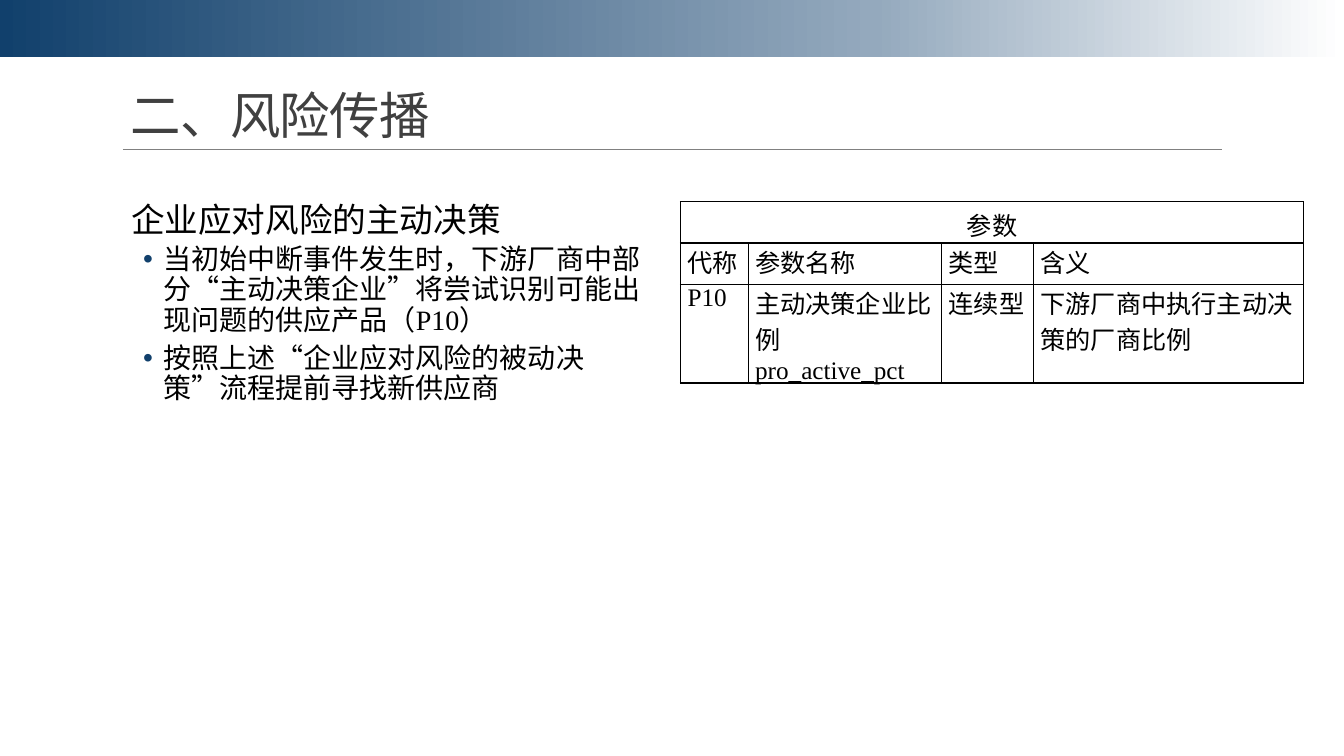
"""Build the risk propagation slide with a decision list and a parameter table."""
from copy import deepcopy

from lxml.etree import SubElement
from pptx import Presentation
from pptx.dml.color import RGBColor
from pptx.enum.shapes import MSO_CONNECTOR, MSO_SHAPE
from pptx.enum.text import MSO_ANCHOR, PP_ALIGN
from pptx.oxml import parse_xml
from pptx.oxml.ns import nsdecls, qn
from pptx.util import Pt

PX = 9144
FONT = "Times New Roman"
NAVY, BLACK, GREY, DARK = "11406C", "000000", "808080", "404040"

TITLE = "二、风险传播"
HEADING = "企业应对风险的主动决策"
POINTS = [
    "当初始中断事件发生时，下游厂商中部分“主动决策企业”将尝试识别可能出现问题的供应产品（P10）",
    "按照上述“企业应对风险的被动决策”流程提前寻找新供应商",
]
PARAMETERS = [
    ["参数", "", "", ""],
    ["代称", "参数名称", "类型", "含义"],
    ["P10", "主动决策企业比例\npro_active_pct", "连续型", "下游厂商中执行主动决策的厂商比例"],
]
COLUMNS = [67, 192, 91, 268]
ROWS = [41, 41, 98]
BAND_STOPS = [(0, NAVY), (0.65, "94A9BD"), (1, "FFFFFF")]


def px(*lengths):
    return [length * PX for length in lengths]


def color(value):
    return RGBColor.from_string(value)


def style(paragraph, size, ink=BLACK):
    for run in paragraph.runs:
        run.font.name = FONT
        run.font.size = Pt(size)
        run.font.color.rgb = color(ink)


def space(paragraph, line, before, after):
    paragraph.line_spacing = line
    paragraph.space_before = Pt(before)
    paragraph.space_after = Pt(after)


def margins(frame, left, top, right, bottom):
    frame.margin_left, frame.margin_top, frame.margin_right, frame.margin_bottom = px(
        left, top, right, bottom)


def indent(paragraph, left, first=0, bullet=None):
    props = paragraph._p.get_or_add_pPr()
    props.set("marL", str(left * PX))
    props.set("indent", str(first * PX))
    if bullet:
        SubElement(SubElement(props, qn("a:buClr")), qn("a:srgbClr")).set("val", NAVY)
        SubElement(props, qn("a:buFont")).set("typeface", "Arial")
        SubElement(props, qn("a:buChar")).set("char", bullet)


def add_text(slide, box, text):
    frame = slide.shapes.add_textbox(*px(*box)).text_frame
    frame.word_wrap = True
    frame.text = text
    return frame


def add_band(slide):
    band = slide.shapes.add_shape(MSO_SHAPE.RECTANGLE, *px(0, 0, 1333, 57))
    band.shadow.inherit = False
    band.line.fill.background()
    band.fill.gradient()
    band.fill.gradient_angle = 0
    stops = band.fill._xPr.find(qn("a:gradFill")).find(qn("a:gsLst"))
    stops.append(deepcopy(stops[0]))
    for stop, (position, ink) in zip(band.fill.gradient_stops, BAND_STOPS):
        stop.position = position
        stop.color.rgb = color(ink)


def add_rule(slide):
    rule = slide.shapes.add_connector(MSO_CONNECTOR.STRAIGHT, *px(122, 148, 1212, 148))
    rule.line.color.rgb = color(GREY)
    rule.line.width = Pt(0.5)
    SubElement(rule._element.spPr, qn("a:effectLst"))


def add_title(slide):
    frame = add_text(slide, (120, 58, 1100, 91), TITLE)
    frame.vertical_anchor = MSO_ANCHOR.BOTTOM
    title = frame.paragraphs[0]
    title.line_spacing = 0.85
    style(title, 36, DARK)
    title.runs[0].font._element.set("spc", "-50")


def add_decisions(slide):
    frame = add_text(slide, (120, 197, 540, 510), "\n".join([HEADING, *POINTS]))
    margins(frame, 0, 5, 0, 5)
    heading, *points = frame.paragraphs
    space(heading, 0.9, 12, 2)
    indent(heading, 10)
    style(heading, 24)
    for point in points:
        point.level = 1
        space(point, 0.9, 2, 4)
        indent(point, 42, -20, "•")
        style(point, 20)


def add_borders(cell):
    props = cell._tc.get_or_add_tcPr()
    for place, side in enumerate("LRTB"):
        props.insert(place, parse_xml(
            f'<a:ln{side} {nsdecls("a")} w="12700"><a:solidFill>'
            f'<a:srgbClr val="{BLACK}"/></a:solidFill></a:ln{side}>'))


def add_parameters(slide):
    table = slide.shapes.add_table(
        len(ROWS), len(COLUMNS), *px(675, 200, sum(COLUMNS), sum(ROWS))).table
    table.first_row = table.horz_banding = False
    for column, width in zip(table.columns, COLUMNS):
        column.width = width * PX
    for row, height in zip(table.rows, ROWS):
        row.height = height * PX
    for r, texts in enumerate(PARAMETERS):
        for c, text in enumerate(texts):
            cell = table.cell(r, c)
            cell.text = text
            cell.fill.background()
            add_borders(cell)
            if r:
                margins(cell, 7, 0, 7, 0)
            for paragraph in cell.text_frame.paragraphs:
                style(paragraph, 18)
    header = table.cell(0, 0)
    header.merge(table.cell(0, len(COLUMNS) - 1))
    header.text_frame.paragraphs[0].alignment = PP_ALIGN.CENTER


def main():
    deck = Presentation()
    deck.slide_width, deck.slide_height = px(1333, 750)
    slide = deck.slides.add_slide(deck.slide_layouts[6])
    add_band(slide)
    add_rule(slide)
    add_title(slide)
    add_decisions(slide)
    add_parameters(slide)
    deck.save("out.pptx")


if __name__ == "__main__":
    main()
